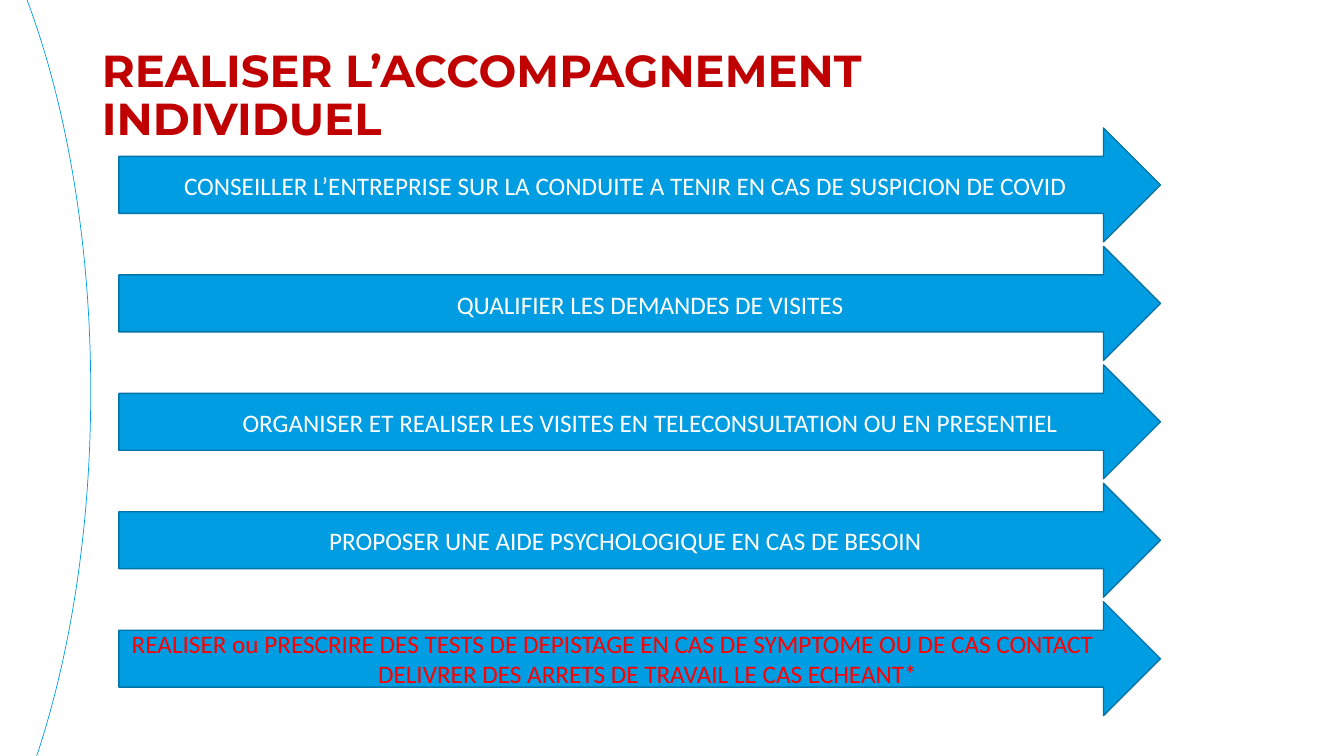
import pptx
import pptx.util
import pptx.dml.color
import pptx.enum.shapes
import pptx.enum.text

Inches = pptx.util.Inches
Pt = pptx.util.Pt
SHAPE = pptx.enum.shapes.MSO_SHAPE
ALIGN = pptx.enum.text.PP_ALIGN
ANCHOR = pptx.enum.text.MSO_ANCHOR

COLORS = {"blue": "019DE2", "edge": "0174A7", "title": "C00000",
          "white": "FFFFFF", "red": "FF0000"}

TITLE = "REALISER L’ACCOMPAGNEMENT INDIVIDUEL"
SHIFT = {"indent": 0.49, "line": 1.07, "before": 5, "after": 8}
# Each arrow is a list of lines with their format.
ARROWS = [
    [("CONSEILLER L’ENTREPRISE SUR LA CONDUITE A TENIR EN CAS DE SUSPICION DE COVID", {})],
    [("QUALIFIER LES DEMANDES DE VISITES", SHIFT)],
    [("ORGANISER ET REALISER LES VISITES EN TELECONSULTATION OU EN PRESENTIEL", SHIFT)],
    [("PROPOSER UNE AIDE PSYCHOLOGIQUE EN CAS DE BESOIN", {})],
    [("REALISER ou PRESCRIRE DES TESTS DE DEPISTAGE EN CAS DE SYMPTOME OU DE CAS CONTACT",
      {"color": "red", "right": 0.25}),
     ("DELIVRER DES ARRETS DE TRAVAIL LE CAS ECHEANT*",
      {"color": "red", "indent": 0.44})],
]
LEFT, TOP, WIDTH, HEIGHT, STEP = 1.18, 1.27, 10.33, 1.13, 1.175


def rgb(name):
    return pptx.dml.color.RGBColor.from_string(COLORS[name])


def write(para, text, size=18, font="Calibri", color="white", bold=False,
          align=ALIGN.CENTER, indent=0, right=0, line=1.0, before=0, after=0):
    para.alignment = align
    para.line_spacing = line
    para.space_before, para.space_after = Pt(before), Pt(after)
    props = para._p.get_or_add_pPr()
    props.set("marL", "0")
    props.set("marR", str(Inches(right)))
    props.set("indent", str(Inches(indent)))
    run = para.add_run()
    run.text = text
    run.font.size, run.font.name, run.font.bold = Pt(size), font, bold
    run.font.color.rgb = rgb(color)


def draw(slide, kind, box, line, width, fill=None):
    shape = slide.shapes.add_shape(kind, *map(Inches, box))
    shape.shadow.inherit = False
    if fill:
        shape.fill.solid()
        shape.fill.fore_color.rgb = rgb(fill)
    else:
        shape.fill.background()
    shape.line.color.rgb = rgb(line)
    shape.line.width = Pt(width)
    return shape


def main():
    deck = pptx.Presentation()
    deck.slide_width, deck.slide_height = Inches(13.33), Inches(7.5)
    slide = deck.slides.add_slide(deck.slide_layouts[5])

    arc = draw(slide, SHAPE.ARC, (-4.42, -2.12, 5.32, 12.01), "blue", 0.5)
    arc.adjustments[0], arc.adjustments[1] = 178.34, 35.857

    title = slide.shapes.title
    title.left, title.top = Inches(0.91), Inches(0.43)
    title.width, title.height = Inches(10.35), Inches(0.67)
    frame = title.text_frame
    frame.word_wrap = True
    frame.auto_size = pptx.enum.text.MSO_AUTO_SIZE.NONE
    frame.vertical_anchor = ANCHOR.TOP
    write(frame.paragraphs[0], TITLE, size=32, font="Montserrat", color="title",
          bold=True, align=ALIGN.LEFT, line=0.9, before=10)

    for row, lines in enumerate(ARROWS):
        box = (LEFT, TOP + row * STEP, WIDTH, HEIGHT)
        arrow = draw(slide, SHAPE.RIGHT_ARROW, box, "edge", 1, "blue")
        frame = arrow.text_frame
        frame.word_wrap = True
        frame.vertical_anchor = ANCHOR.MIDDLE
        for i, (text, style) in enumerate(lines):
            para = frame.add_paragraph() if i else frame.paragraphs[0]
            write(para, text, **style)

    deck.save("out.pptx")


if __name__ == "__main__":
    main()
